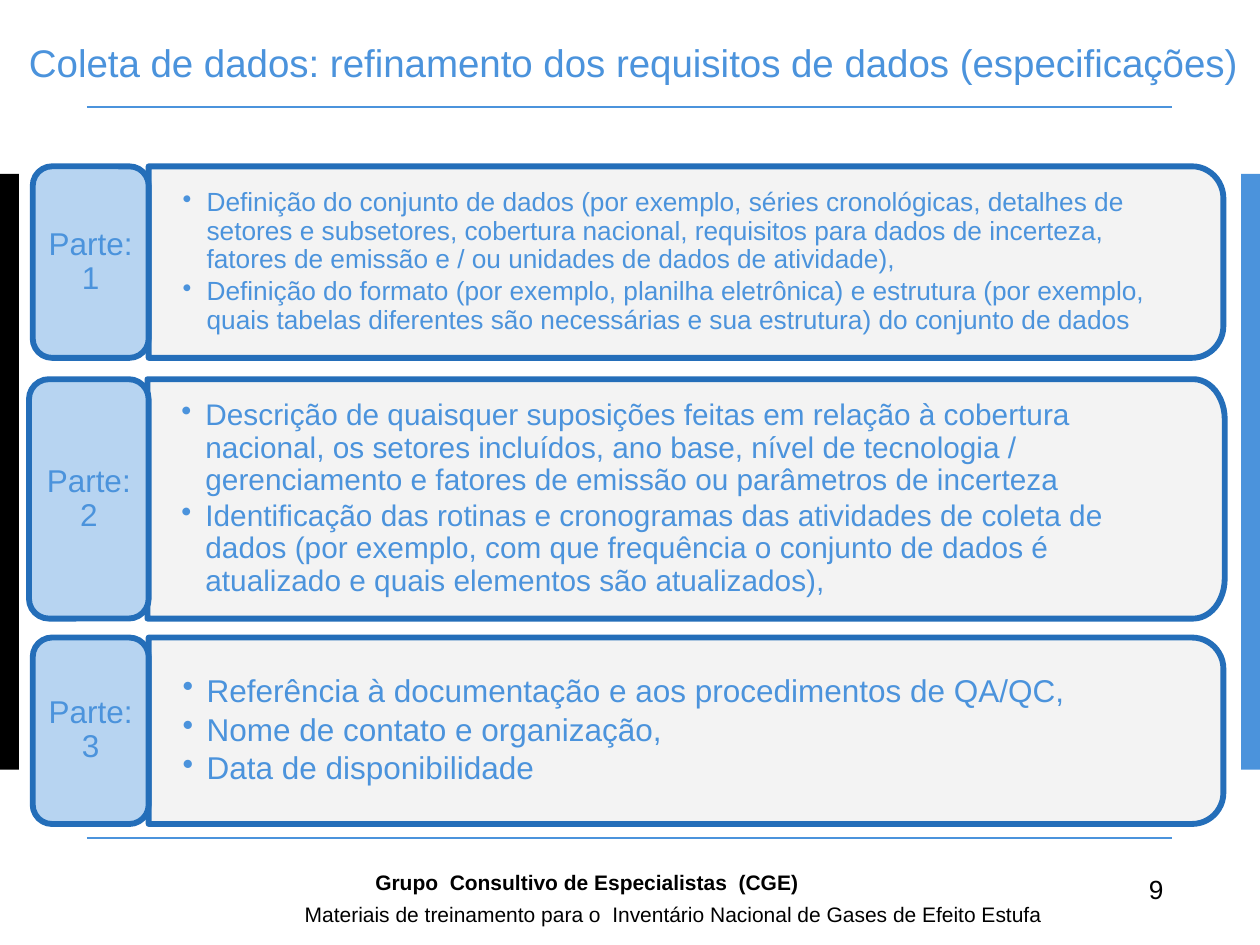
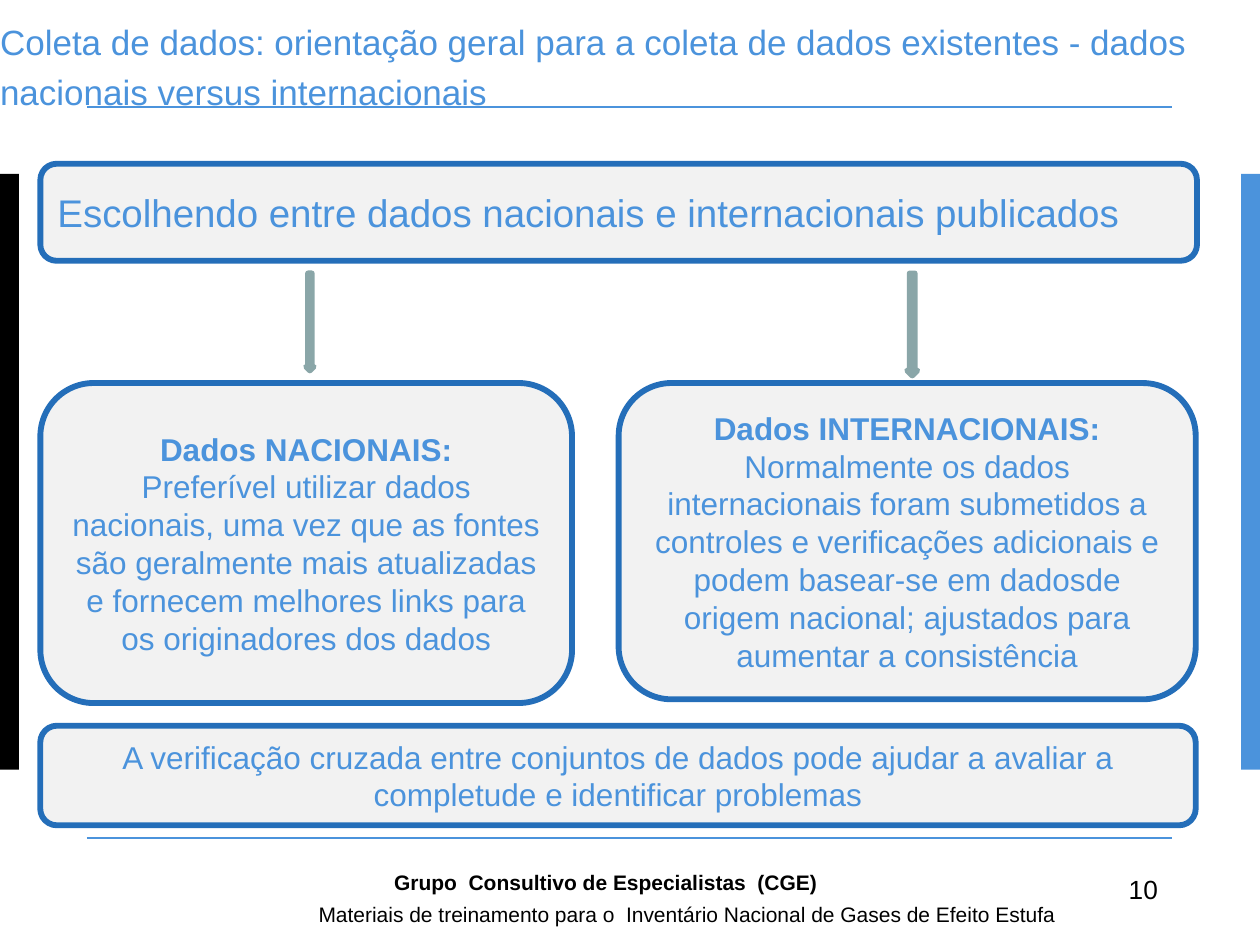
from math import cos, sin, pi
from pptx import Presentation
from pptx.dml.color import RGBColor
from pptx.enum.shapes import MSO_CONNECTOR, MSO_SHAPE
from pptx.enum.text import MSO_ANCHOR, PP_ALIGN
from pptx.oxml.ns import qn
from pptx.util import Inches, Pt
from lxml import etree

C = {"text": "4B93DC", "edge": "246EB9", "panel": "F2F2F2", "label": "B7D4F1",
     "black": "000000", "arrow": "BBE0E3", "arrow_edge": "8AA6A8"}


def write(sp, paras, size=18, color="text", bold_first=False, align=PP_ALIGN.LEFT,
          anchor=MSO_ANCHOR.MIDDLE, ins=(0.1, 0.05, 0.1, 0.05), spacing=None,
          after=0, bullet=False, wrap=True):
    tf = sp.text_frame
    tf.word_wrap = wrap
    tf.vertical_anchor = anchor
    tf.margin_left, tf.margin_top, tf.margin_right, tf.margin_bottom = map(Inches, ins)
    for i, text in enumerate(paras):
        p = tf.paragraphs[0] if i == 0 else tf.add_paragraph()
        p.alignment = align
        if spacing:
            p.line_spacing = spacing
        p.space_before, p.space_after = Pt(0), Pt(after)
        if bullet:
            pPr = p._p.get_or_add_pPr()
            pPr.set("marL", str(Inches(0.19)))
            pPr.set("indent", str(Inches(-0.19)))
            etree.SubElement(pPr, qn("a:buChar")).set("char", "•")
        r = p.add_run()
        r.text = text
        r.font.name, r.font.size = "Arial", Pt(size)
        r.font.bold = bold_first and i == 0
        r.font.color.rgb = RGBColor.from_string(C[color])


def paint(sp, fill, edge=None):
    sp.shadow.inherit = False
    sp.fill.solid()
    sp.fill.fore_color.rgb = RGBColor.from_string(C[fill])
    if edge:
        sp.line.color.rgb = RGBColor.from_string(C[edge])
        sp.line.width = Pt(3.35)
    else:
        sp.line.fill.background()


prs = Presentation()
prs.slide_width, prs.slide_height = Inches(10), Inches(7.5)

# Shared frame: side bands, rules, title, footer
pages = [
    dict(title="Coleta de dados: refinamento dos requisitos de dados (especificações)",
         at=(0.23, 0, 9.77, 1.15), size=22, spacing=Pt(15),
         number="9", number_x=9.02, material_x=2.32, group_x=2.88),
    dict(title="Coleta de dados: orientação geral para a coleta de dados existentes - "
               "dados nacionais versus internacionais",
         at=(0, -0.03, 9.88, 1.05), size=20, spacing=1.2,
         number="10", number_x=8.86, material_x=2.43, group_x=3.03),
]
slides = []
for page in pages:
    s = prs.slides.add_slide(prs.slide_layouts[6])
    slides.append(s)
    for x, color in ((0, "black"), (9.85, "text")):
        band = s.shapes.add_shape(MSO_SHAPE.RECTANGLE, Inches(x), Inches(1.38),
                                  Inches(0.15), Inches(4.73))
        paint(band, color)
    for y in (0.85, 6.65):
        rule = s.shapes.add_connector(MSO_CONNECTOR.STRAIGHT, Inches(0.69), Inches(y),
                                      Inches(9.3), Inches(y))
        rule.line.color.rgb = RGBColor.from_string(C["text"])
        rule.line.width = Pt(1)
        etree.SubElement(rule._element.spPr, qn("a:effectLst"))
    title = s.shapes.add_textbox(*map(Inches, page["at"]))
    write(title, [page["title"]], size=page["size"], spacing=page["spacing"], ins=(0, 0, 0, 0))
    footers = [
        (page["number"], page["number_x"], 6.88, 9.33, 0.35, 15, False),
        ("Materiais de treinamento para o  Inventário Nacional de Gases de Efeito Estufa",
         page["material_x"], 7.11, 8.6, 0.2, 12, False),
        ("Grupo  Consultivo de Especialistas  (CGE)",
         page["group_x"], 6.85, 6.97, 0.27, 12, True),
    ]
    for text, x, y, right, h, size, bold in footers:
        tb = s.shapes.add_textbox(Inches(x), Inches(y), Inches(right - x), Inches(h))
        write(tb, [text], size=size, color="black", bold_first=bold,
              anchor=MSO_ANCHOR.TOP, wrap=False)

# Slide 1: three parts, each a panel with its label
s = slides[0]
parts = [
    (0.26, 1.18, 1.32, 9.71, 1.52, 15, [
        "Definição do conjunto de dados (por exemplo, séries cronológicas, detalhes de setores "
        "e subsetores, cobertura nacional, requisitos para dados de incerteza, fatores de "
        "emissão e / ou unidades de dados de atividade),",
        "Definição do formato (por exemplo, planilha eletrônica) e estrutura (por exemplo, "
        "quais tabelas diferentes são necessárias e sua estrutura) do conjunto de dados"]),
    (0.23, 1.17, 3.01, 9.72, 1.9, 17, [
        "Descrição de quaisquer suposições feitas em relação à cobertura nacional, os setores "
        "incluídos, ano base, nível de tecnologia / gerenciamento e fatores de emissão ou "
        "parâmetros de incerteza",
        "Identificação das rotinas e cronogramas das atividades de coleta de dados (por "
        "exemplo, com que frequência o conjunto de dados é atualizado e quais elementos são "
        "atualizados),"]),
    (0.26, 1.18, 5.06, 9.71, 1.48, 18, [
        "Referência à documentação e aos procedimentos de QA/QC,",
        "Nome de contato e organização,",
        "Data de disponibilidade"]),
]
for n, (label_x, x, y, right, h, size, bullets) in enumerate(parts, 1):
    # Panel with only its right corners rounded
    rx, ry = 0.25, h / 6
    angles = [i * pi / 24 for i in range(13)]
    points = [(right - rx + rx * sin(a), y + ry - ry * cos(a)) for a in angles]
    points += [(right - rx + rx * cos(a), y + h - ry + ry * sin(a)) for a in angles]
    points += [(x, y + h)]
    fb = s.shapes.build_freeform(Inches(x), Inches(y), scale=1.0)
    fb.add_line_segments([(Inches(px), Inches(py)) for px, py in points], close=True)
    panel = fb.convert_to_shape()
    paint(panel, "panel", "edge")
    fill_color = panel._element.spPr.find(qn("a:solidFill"))[0]
    etree.SubElement(fill_color, qn("a:alpha")).set("val", "90000")
    write(panel, bullets, size=size, bullet=True, spacing=0.9, after=0.15 * size,
          ins=(0.27, 0.21, 0.34, 0.21))

    label = s.shapes.add_shape(MSO_SHAPE.ROUNDED_RECTANGLE, Inches(label_x), Inches(y),
                               Inches(1.18 - label_x), Inches(h))
    paint(label, "label", "edge")
    write(label, [f"Parte:{n}"], align=PP_ALIGN.CENTER, spacing=0.9,
          ins=(0.07, 0.04, 0.07, 0.04))

# Slide 2: question, two kinds of data, conclusion
s = slides[1]
boxes = [
    (0.32, 1.3, 9.18, 0.77, 22, PP_ALIGN.LEFT,
     ["Escolhendo entre dados nacionais e internacionais publicados"]),
    (0.32, 3.04, 4.22, 2.54, 18, PP_ALIGN.CENTER,
     ["Dados NACIONAIS:",
      "Preferível utilizar dados nacionais, uma vez que as fontes são geralmente mais "
      "atualizadas e fornecem melhores links para os originadores dos dados"]),
    (4.91, 3.04, 4.58, 2.51, 18, PP_ALIGN.CENTER,
     ["Dados INTERNACIONAIS:",
      "Normalmente os dados internacionais foram submetidos a controles e verificações "
      "adicionais e podem basear-se em dadosde origem nacional; ajustados para aumentar a "
      "consistência"]),
    (0.32, 5.76, 9.17, 0.79, 18, PP_ALIGN.CENTER,
     ["A verificação cruzada entre conjuntos de dados pode ajudar a avaliar a completude e "
      "identificar problemas"]),
]
for x, y, w, h, size, align, paras in boxes:
    box = s.shapes.add_shape(MSO_SHAPE.ROUNDED_RECTANGLE, *map(Inches, (x, y, w, h)))
    paint(box, "panel", "edge")
    write(box, paras, size=size, align=align, bold_first=len(paras) > 1)

# Arrows from the question to each kind of data
for x, w, h in ((7.2, 0.08, 0.81), (2.43, 0.06, 0.77)):
    arrow = s.shapes.add_shape(MSO_SHAPE.DOWN_ARROW, *map(Inches, (x, 2.17, w, h)))
    paint(arrow, "arrow", "arrow_edge")

prs.save("out.pptx")
